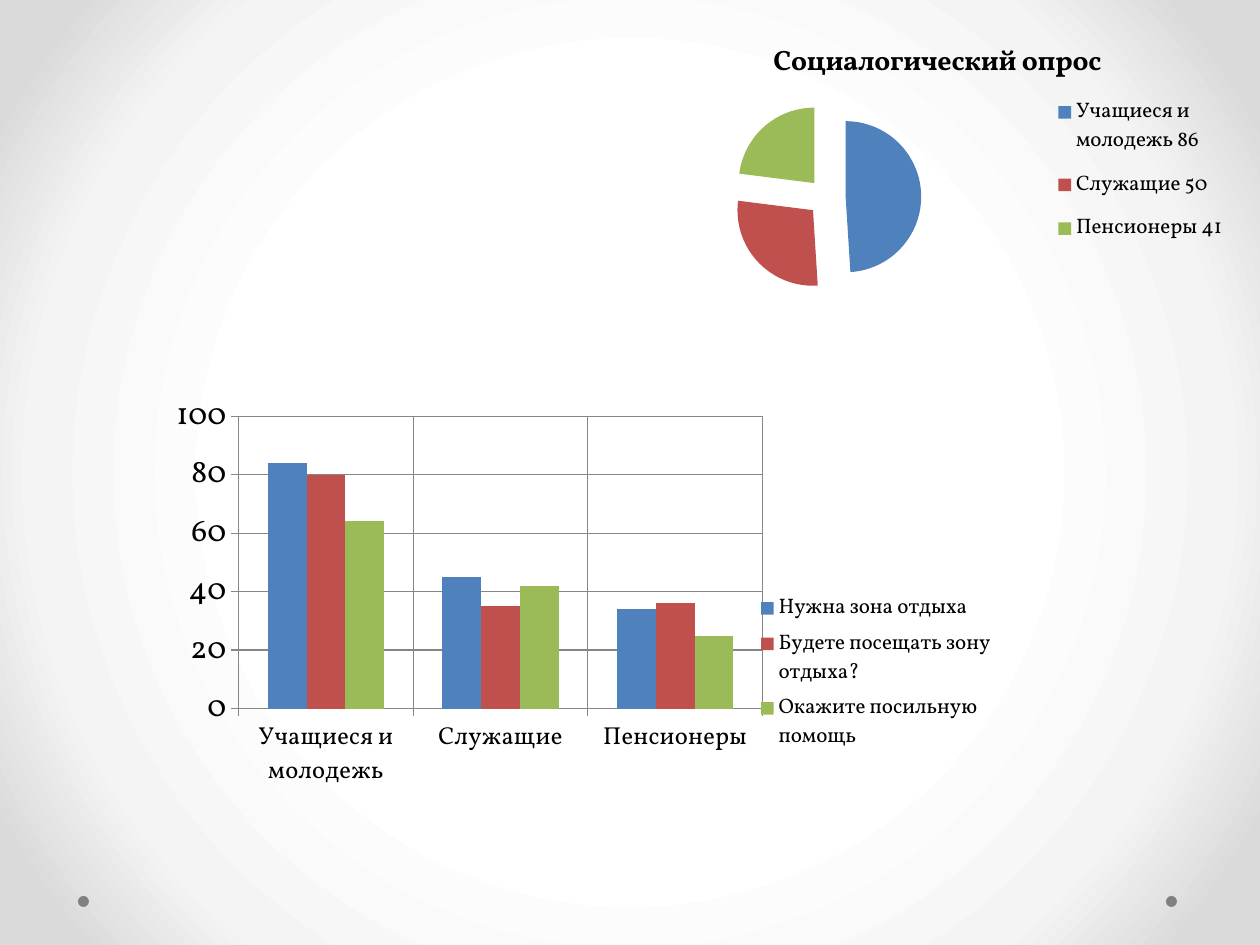
import pptx
import pptx.chart.data
import pptx.dml.color
import pptx.enum.chart
import pptx.enum.shapes
import pptx.oxml
import pptx.oxml.ns
import pptx.util

PX = 914400 // 126
THEME = {
    "font": "Vollkorn",
    "text": "000000",
    "grid": "868686",
    "dot": "808080",
    "series": ["4F81BD", "C0504D", "9BBB59"],
    "glow": [(50, "FFFFFF"), (76, "F4F4F4"), (92, "DADADA")],
    "size": {"chart": 18, "title": 16, "category": 14, "legend": 12},
}


def color(value):
    return pptx.dml.color.RGBColor.from_string(value)


def format_font(font, size, bold=False):
    values = {"name": THEME["font"], "size": pptx.util.Pt(THEME["size"][size]), "bold": bold}
    for name, value in values.items():
        setattr(font, name, value)
    font.color.rgb = color(THEME["text"])


def paint(fill, value):
    fill.solid()
    fill.fore_color.rgb = color(value)


def chart_xml(body):
    return pptx.oxml.parse_xml(body.replace(">", f" {pptx.oxml.ns.nsdecls('c')}>", 1))


def set_layout(parent, index, box, inner=False):
    """Fix a chart part at left, top, width, height given as shares of the chart."""
    for old in parent.findall(pptx.oxml.ns.qn("c:layout")):
        parent.remove(old)
    target = '<c:layoutTarget val="inner"/>' if inner else ""
    modes = '<c:xMode val="edge"/><c:yMode val="edge"/>'
    lengths = "".join(f'<c:{side} val="{share}"/>' for side, share in zip("xywh", box))
    layout = f"<c:layout><c:manualLayout>{target}{modes}{lengths}</c:manualLayout></c:layout>"
    parent.insert(index, chart_xml(layout))


def add_background(page):
    stops = "".join(
        f'<a:gs pos="{place * 1000}"><a:srgbClr val="{value}"/></a:gs>'
        for place, value in THEME["glow"]
    )
    background = pptx.oxml.parse_xml(
        f'<p:bg {pptx.oxml.ns.nsdecls("p", "a")}><p:bgPr>'
        f'<a:gradFill rotWithShape="1"><a:gsLst>{stops}</a:gsLst><a:path path="circle">'
        '<a:fillToRect l="50000" t="50000" r="50000" b="50000"/></a:path></a:gradFill>'
        "<a:effectLst/></p:bgPr></p:bg>"
    )
    page.element.cSld.insert(0, background)


def add_corner_dots(page, left, top, width, size):
    for x in (left, left + width - size):
        dot = page.shapes.add_shape(
            pptx.enum.shapes.MSO_SHAPE.OVAL, x * PX, top * PX, size * PX, size * PX
        )
        dot.shadow.inherit = False
        paint(dot.fill, THEME["dot"])
        dot.line.fill.background()


def add_chart(page, kind, box, categories, series, plot_box, legend_box):
    data = pptx.chart.data.CategoryChartData()
    data.categories = categories
    for name, values in series.items():
        data.add_series(name, values)
    chart = page.shapes.add_chart(kind, *(length * PX for length in box), data).chart
    format_font(chart.font, "chart")
    chart.has_title = False
    chart.has_legend = True
    chart.legend.position = pptx.enum.chart.XL_LEGEND_POSITION.RIGHT
    chart.legend.include_in_layout = False
    format_font(chart.legend.font, "legend")
    set_layout(chart.legend._element, 1, legend_box)
    set_layout(chart.plots[0]._element.getparent(), 0, plot_box, inner=True)
    return chart


def add_survey_pie(page, box):
    title = "Социалогический опрос"
    chart = add_chart(
        page, pptx.enum.chart.XL_CHART_TYPE.PIE, box,
        ["Учащиеся и молодежь 86", "Служащие 50", "Пенсионеры 41"],
        {title: [49, 28, 23]},
        (0.01, 0.28, 0.62, 0.67), (0.68, 0.21, 0.3, 0.62),
    )
    chart.has_title = True
    chart.chart_title.include_in_layout = False
    para = chart.chart_title.text_frame.paragraphs[0]
    span = para.add_run()
    span.text = title
    format_font(span.font, "title", bold=True)
    chart.plots[0].vary_by_categories = True
    series = chart.plots[0].series[0]
    for index, value in enumerate(THEME["series"]):
        paint(series.points[index].format.fill, value)
    name = series._element.find(pptx.oxml.ns.qn("c:tx"))
    name.addnext(chart_xml('<c:explosion val="25" ></c:explosion>'))


def add_answer_columns(page, box):
    chart = add_chart(
        page, pptx.enum.chart.XL_CHART_TYPE.COLUMN_CLUSTERED, box,
        ["Учащиеся и молодежь", "Служащие", "Пенсионеры"],
        {
            "Нужна зона отдыха": [84, 45, 34],
            "Будете посещать зону отдыха?": [80, 35, 36],
            "Окажите посильную помощь": [64, 42, 25],
        },
        (0.12, 0.04, 0.6, 0.53), (0.71, 0.35, 0.28, 0.31),
    )
    plot = chart.plots[0]
    plot.vary_by_categories = False
    plot.gap_width = 150
    for series, value in zip(plot.series, THEME["series"]):
        paint(series.format.fill, value)
    for axis, size in ((chart.category_axis, "category"), (chart.value_axis, "chart")):
        axis.has_major_gridlines = True
        axis.major_tick_mark = pptx.enum.chart.XL_TICK_MARK.OUTSIDE
        format_font(axis.tick_labels.font, size)
        for line in (axis.format.line, axis.major_gridlines.format.line):
            line.color.rgb = color(THEME["grid"])
            line.width = pptx.util.Pt(0.75)


def main():
    deck = pptx.Presentation()
    deck.slide_width, deck.slide_height = pptx.util.Inches(10), pptx.util.Inches(7.5)
    page = deck.slides.add_slide(deck.slide_layouts[6])
    add_background(page)
    add_corner_dots(page, left=78, top=896, width=1099, size=11)
    add_survey_pie(page, (630, 24, 615, 282))
    add_answer_columns(page, (134, 394, 873, 552))
    deck.save("out.pptx")


if __name__ == "__main__":
    main()
